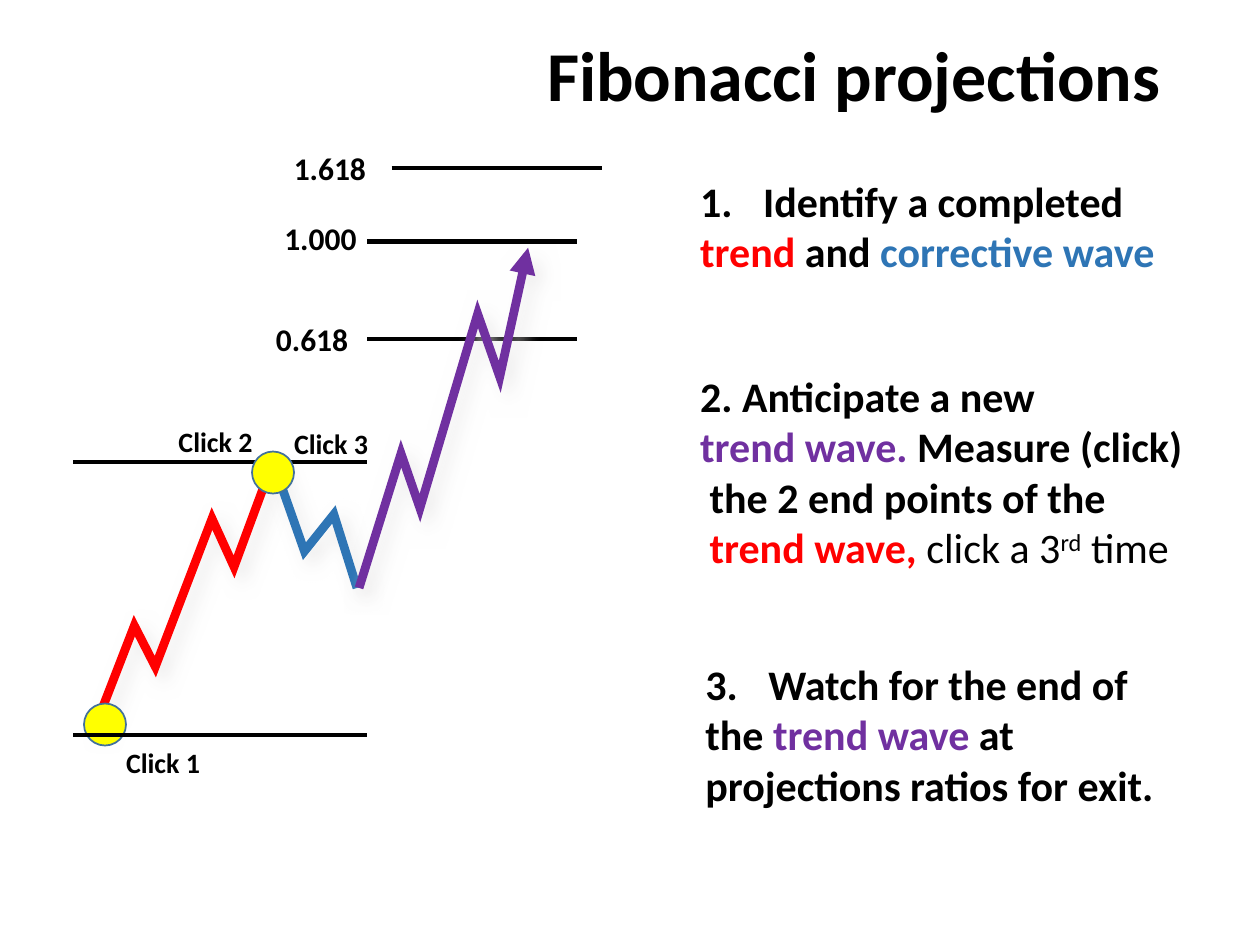
from lxml import etree
from pptx import Presentation, util as u
from pptx.dml.color import RGBColor
from pptx.enum import shapes, text as t
from pptx.oxml.ns import qn

COLS, ROWS = 120, 90
CELL = u.Inches(10) // COLS
BLACK, RED, BLUE, PURPLE = "000000", "FF0000", "2E75B5", "7030A0"
YELLOW, RIM, SHADE = "FFFF00", "42719B", "E7E6E6"


def tint(code):
    return RGBColor.from_string(code)


def grid(*cells):
    return [round(c * CELL) for c in cells]


def node(parent, tag, **attrs):
    item = etree.SubElement(parent, qn(tag))
    for key, val in attrs.items():
        item.set(key, str(val))
    return item


def number(para, start):
    props = para._p.get_or_add_pPr()
    color = node(props, "a:buClr")
    node(color, "a:srgbClr", val=BLACK)
    node(props, "a:buFont", typeface="+mj-lt")
    node(props, "a:buAutoNum", type="arabicPeriod", startAt=start)


def write(slide, lines, box, size=24, pad=True, wrap=False, align="LEFT",
          anchor="TOP", hang=0, start=None):
    frame = slide.shapes.add_textbox(*grid(*box)).text_frame
    frame.word_wrap = wrap
    frame.vertical_anchor = t.MSO_ANCHOR[anchor]
    frame.margin_left = frame.margin_right = u.Inches(0.1 * pad)
    frame.margin_top = frame.margin_bottom = u.Inches(0.05 * pad)
    for i, line in enumerate(lines):
        para = frame.add_paragraph() if i else frame.paragraphs[0]
        para.alignment = t.PP_ALIGN[align]
        if hang:
            props = para._p.get_or_add_pPr()
            props.set("marL", str(u.Inches(hang)))
            props.set("indent", str(-u.Inches(hang)))
        if start and i == 0:
            number(para, start)
        for words, color, *style in line:
            run = para.add_run()
            run.text = words
            font = run.font
            font.name, font.size = "Calibri", u.Pt(size)
            font.bold = "plain" not in style
            font.color.rgb = tint(color)
            if "super" in style:
                run._r.get_or_add_rPr().set("baseline", "30000")


def level(slide, x, y, wide):
    left, top, right = grid(x, y, x + wide)
    line = slide.shapes.add_connector(
        shapes.MSO_CONNECTOR.STRAIGHT, left, top, right, top)
    line.line.color.rgb = tint(BLACK)
    line.line.width = u.Pt(2.5)
    node(line._element.spPr, "a:effectLst")


def dot(slide, x, y):
    disc = slide.shapes.add_shape(shapes.MSO_SHAPE.OVAL, *grid(x, y, 4, 4))
    disc.shadow.inherit = False
    disc.fill.solid()
    disc.fill.fore_color.rgb = tint(YELLOW)
    disc.line.color.rgb = tint(RIM)
    disc.line.width = u.Pt(1)


def wave(slide, x, y, points, color, arrow=False):
    spots = [grid(x + a, y + b) for a, b in points]
    pen = slide.shapes.build_freeform(*spots[0])
    pen.add_line_segments(spots[1:], close=False)
    shape = pen.convert_to_shape()
    shape.fill.background()
    shape.line.color.rgb = tint(color)
    shape.line.width = u.Pt(5)
    edge = shape.line._get_or_add_ln()
    node(edge, "a:miter", lim=800000)
    if arrow:
        node(edge, "a:tailEnd", type="triangle")
    shape.shadow.inherit = False
    glow = node(shape._element.spPr.find(qn("a:effectLst")), "a:outerShdw",
                blurRad=u.Pt(10), dist=u.Pt(6), dir=45 * 60000)
    node(node(glow, "a:srgbClr", val=SHADE), "a:alpha", val=75000)


def chart(slide, x, y):
    wave(slide, x, y, [(2, 56.4), (5.8, 46.6), (7.8, 50.5), (13.2, 36.4),
                       (15.3, 41), (19, 31)], RED)
    wave(slide, x, y, [(19, 31), (22, 39.5), (24.8, 36), (27, 43)], BLUE)
    level(slide, x, y + 31, 28)
    dot(slide, x + 1, y + 54)
    dot(slide, x + 17, y + 30)
    level(slide, x, y + 57, 28)
    clicks = [(5, 58), (10, 27.4), (21, 27.6)]
    for i, (a, b) in enumerate(clicks, 1):
        write(slide, [[(f"Click {i}", BLACK)]], (x + a, y + b, 7.1, 3.2),
              size=16, pad=False, anchor="MIDDLE")
    ratios = [("0.618", 18.1, 16.9, 28, 19.3),
              ("1.000", 18.9, 7.3, 28, 10),
              ("1.618", 19.8, 0.6, 30.3, 3)]
    for name, a, b, c, d in ratios:
        level(slide, x + c, y + d, 20)
        write(slide, [[(name, BLACK)]], (x + a, y + b, 9.4, 4.8), size=18)
    wave(slide, x, y, [(27.2, 43), (31.2, 30.2), (33, 35.4), (38.5, 16.9),
                       (40.6, 22.9), (43.3, 10.6)], PURPLE, arrow=True)


def notes(slide, x, y):
    find = [[("Identify a completed", BLACK)],
            [("trend ", RED), ("and ", BLACK), ("corrective wave", BLUE)]]
    click = [[("2. Anticipate a new", BLACK)],
             [("trend wave. ", PURPLE), ("Measure (click)", BLACK)],
             [(" the 2 end points of the", BLACK)],
             [(" ", BLACK), ("trend wave, ", RED),
              ("click a 3", BLACK, "plain"),
              ("rd", BLACK, "plain", "super"), (" time", BLACK, "plain")]]
    watch = [[("Watch for the end of", BLACK)],
             [("the ", BLACK), ("trend wave ", PURPLE), ("at", BLACK)],
             [("projections ratios for exit.", BLACK)]]
    steps = [(find, 0, 0, 46.2, 15.7, 1),
             (click, 0, 18.6, 48.8, 20.6, None),
             (watch, 0.5, 46, 45.5, 15.7, 3)]
    for lines, a, b, wide, high, start in steps:
        write(slide, lines, (x + a, y + b, wide, high),
              wrap=True, hang=0.5, start=start)


def main():
    deck = Presentation()
    deck.slide_width, deck.slide_height = grid(COLS, ROWS)
    slide = deck.slides.add_slide(deck.slide_layouts[6])
    write(slide, [[("Fibonacci projections", BLACK)]],
          (50.3, 2.4, 61.4, 9.2), size=40, align="RIGHT")
    notes(slide, 65.5, 16.1)
    chart(slide, 7, 13)
    deck.save("out.pptx")


if __name__ == "__main__":
    main()
